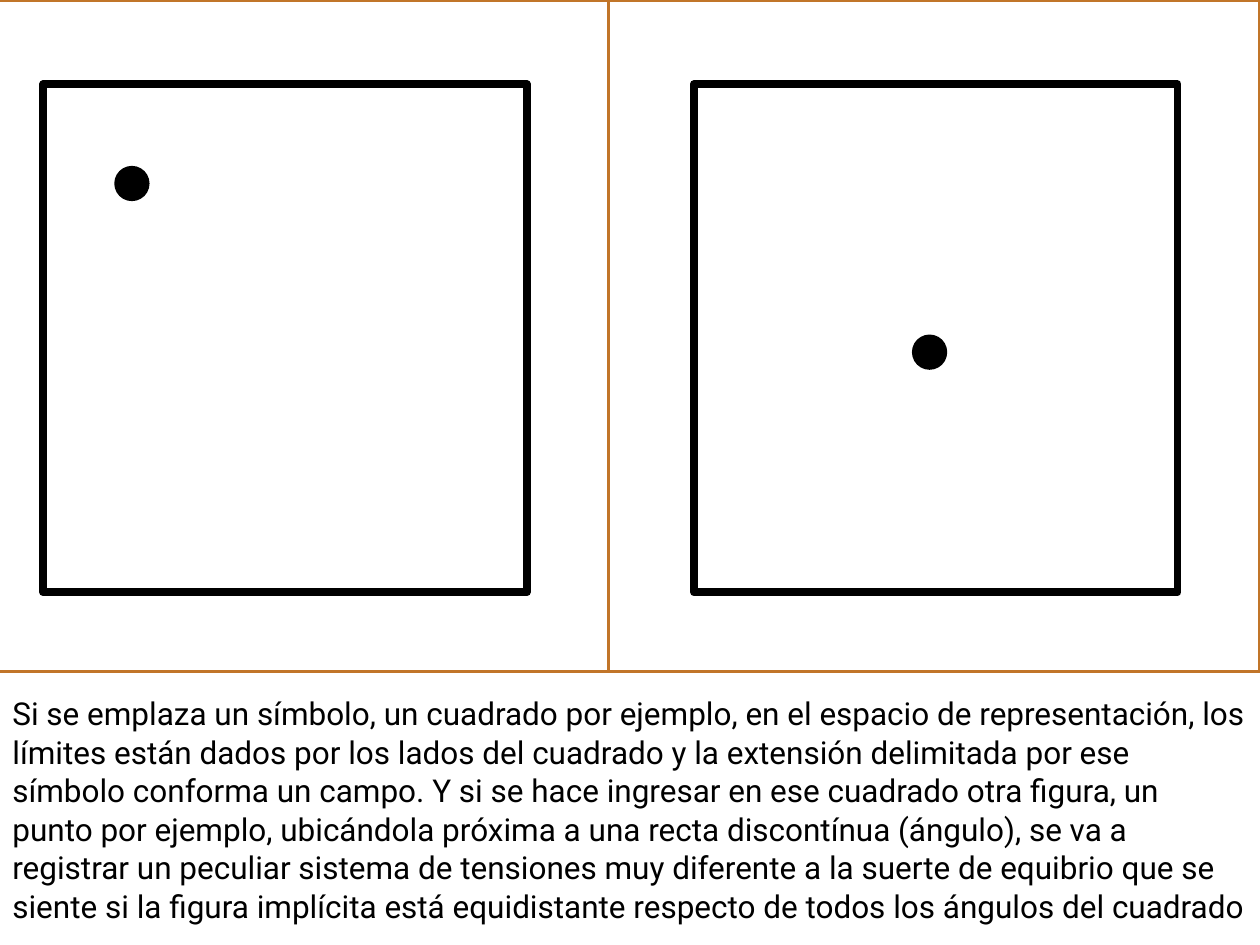
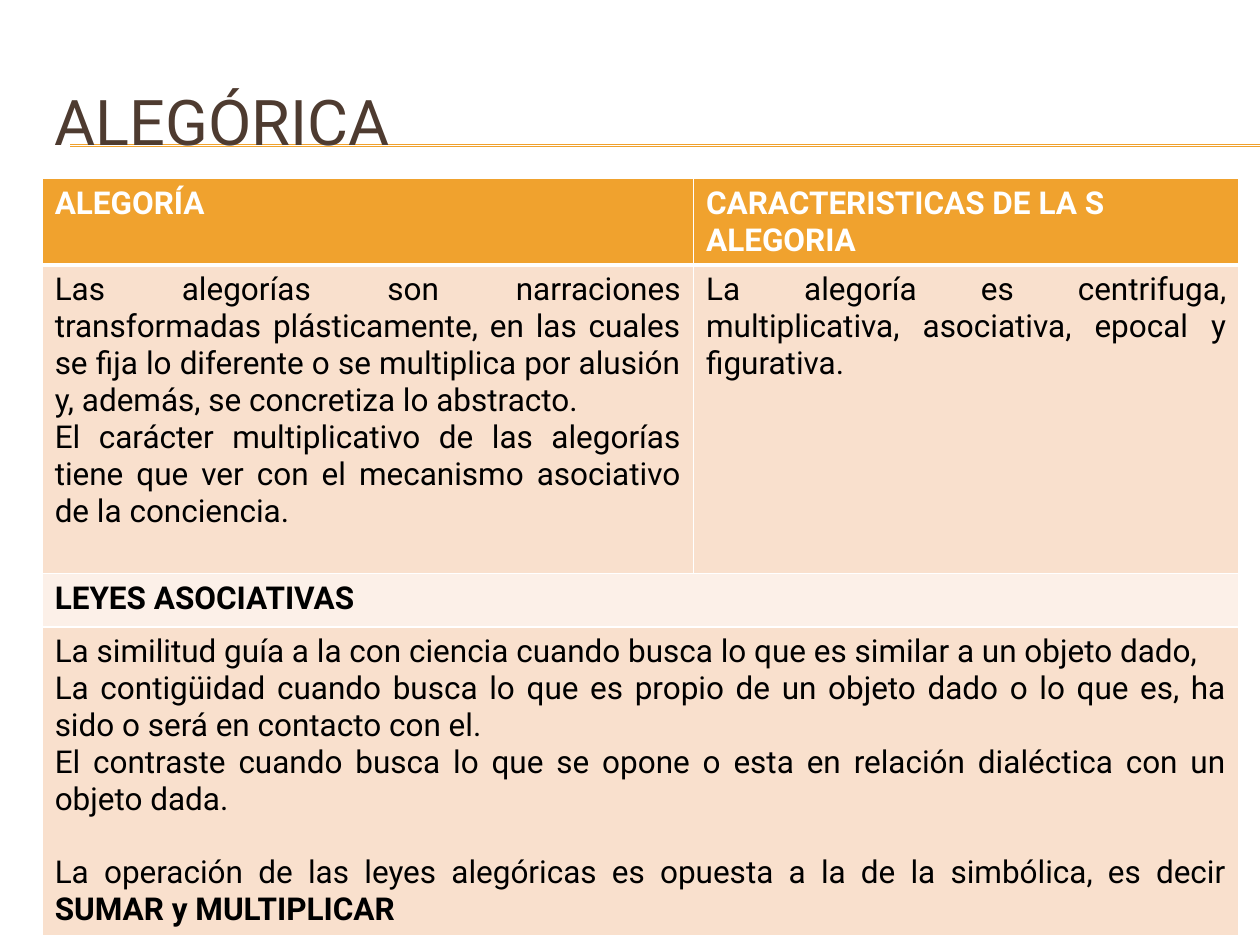
from dataclasses import dataclass

from lxml import etree
from pptx import Presentation
from pptx.dml.color import RGBColor
from pptx.enum.shapes import MSO_CONNECTOR, MSO_SHAPE
from pptx.enum.text import MSO_ANCHOR, MSO_AUTO_SIZE, PP_ALIGN
from pptx.oxml.ns import qn
from pptx.util import Cm, Pt

LINE = MSO_CONNECTOR.STRAIGHT
RECT, OVAL = MSO_SHAPE.RECTANGLE, MSO_SHAPE.OVAL
MIDDLE = MSO_ANCHOR.MIDDLE
FIXED = MSO_AUTO_SIZE.NONE
LEFT, JUSTIFY = PP_ALIGN.LEFT, PP_ALIGN.JUSTIFY


@dataclass(frozen=True)
class Theme:
    font: str = "Roboto"
    title: int = 36
    body: int = 18
    white: str = "FFFFFF"
    black: str = "000000"
    brown: str = "4E3B30"
    gold: str = "F0A22E"
    copper: str = "C17529"
    peach: str = "F9E0CD"
    cream: str = "FCF0E8"


THEME = Theme()
WIDTH, HEIGHT = 25.4, 19.05

CAPTION = (
    "Si se emplaza un símbolo, un cuadrado por ejemplo, en el espacio de representación, "
    "los límites están dados por los lados del cuadrado y la extensión delimitada por ese "
    "símbolo conforma un campo. Y si se hace ingresar en ese cuadrado otra figura, un punto "
    "por ejemplo, ubicándola próxima a una recta discontínua (ángulo), se va a registrar un "
    "peculiar sistema de tensiones muy diferente a la suerte de equibrio que se siente si la "
    "figura implícita está equidistante respecto de todos los ángulos del cuadrado"
)
STORIES = [
    "Las alegorías son narraciones transformadas plásticamente, en las cuales se fija lo "
    "diferente o se multiplica por alusión y, además, se concretiza lo abstracto.",
    "El carácter multiplicativo de las alegorías tiene que ver con el mecanismo asociativo "
    "de la conciencia.",
]
TRAITS = ["La alegoría es centrifuga, multiplicativa, asociativa, epocal y figurativa."]
LAWS = [
    "La similitud guía a la con ciencia cuando busca lo que es similar a un objeto dado,",
    "La contigüidad cuando busca lo que es propio de un objeto dado o lo que es, ha sido o "
    "será en contacto con el.",
    "El contraste cuando busca lo que se opone o esta en relación dialéctica con un objeto dada.",
    "La operación de las leyes alegóricas es opuesta a la de la simbólica, es decir ",
]


def add_run(para, text, color=THEME.black, size=THEME.body, bold=False):
    run = para.add_run()
    run.text = text
    font = run.font
    font.name, font.size, font.bold = THEME.font, Pt(size), bold
    font.color.rgb = RGBColor.from_string(color)


def add_lines(frame, lines, align=LEFT, **style):
    for index, text in enumerate(lines):
        para = frame.add_paragraph() if index else frame.paragraphs[0]
        para.alignment = align
        add_run(para, text, **style)
    return para


def add_form(group, kind, box, fill, line, weight):
    form = group.shapes.add_shape(kind, *map(Cm, box))
    form.shadow.inherit = False
    if fill:
        form.fill.solid()
        form.fill.fore_color.rgb = RGBColor.from_string(fill)
    else:
        form.fill.background()
    form.line.color.rgb = RGBColor.from_string(line)
    form.line.width = Pt(weight)


def add_panel(slide, left, dot):
    group = slide.shapes.add_group_shape()
    add_form(group, RECT, (left, 0, 13.13, 13.54), THEME.white, THEME.copper, 2)
    add_form(group, RECT, (left + 1.72, 1.7, 9.75, 10.24), None, THEME.black, 4.5)
    add_form(group, OVAL, (*dot, 0.64, 0.64), THEME.black, THEME.black, 2)


def add_caption(slide, text):
    box = slide.shapes.add_textbox(Cm(0), Cm(13.87), Cm(WIDTH), Cm(4.88))
    frame = box.text_frame
    frame.word_wrap = True
    frame.vertical_anchor = MIDDLE
    add_lines(frame, [text]).line_spacing = 1.02


def add_title(slide, text):
    title = slide.shapes.title
    title.left, title.top, title.width, title.height = map(Cm, (0.85, 1.27, 24.13, 2.33))
    frame = title.text_frame
    frame.auto_size, frame.vertical_anchor = FIXED, MIDDLE
    add_lines(frame, [text], color=THEME.brown, size=THEME.title)
    for level in (2.92, 2.95):
        rule = slide.shapes.add_connector(LINE, Cm(1.42), Cm(level), Cm(WIDTH), Cm(level))
        rule.line.color.rgb = RGBColor.from_string(THEME.gold)
        rule.line.width = Pt(0.75)
        etree.SubElement(rule.element.spPr, qn("a:effectLst"))
        title.element.addprevious(rule.element)


def paint(cell, fill, top, bottom):
    props = cell._tc.get_or_add_tcPr()
    for side, weight in (("L", 1), ("R", 1), ("T", top), ("B", bottom)):
        edge = etree.SubElement(props, qn(f"a:ln{side}"), w=str(Pt(weight)))
        solid = etree.SubElement(edge, qn("a:solidFill"))
        etree.SubElement(solid, qn("a:srgbClr"), val=THEME.white)
    cell.fill.solid()
    cell.fill.fore_color.rgb = RGBColor.from_string(fill)


def add_grid(slide):
    widths, heights = (13.13, 11.0), (1.73, 6.22, 1.07, 6.22)
    fills = (THEME.gold, THEME.peach, THEME.cream, THEME.peach)
    size = sum(widths), sum(heights)
    grid = slide.shapes.add_table(4, 2, Cm(0.85), Cm(3.6), *map(Cm, size)).table
    for column, width in zip(grid.columns, widths):
        column.width = Cm(width)
    for index, (row, height, fill) in enumerate(zip(grid.rows, heights, fills)):
        row.height = Cm(height)
        for cell in row.cells:
            paint(cell, fill, 3 if index == 1 else 1, 3 if index == 0 else 1)
    for index in (2, 3):
        grid.cell(index, 0).merge(grid.cell(index, 1))
    for index, head in enumerate(("ALEGORÍA", "CARACTERISTICAS DE LA S ALEGORIA")):
        add_lines(grid.cell(0, index).text_frame, [head], color=THEME.white, bold=True)
    add_lines(grid.cell(1, 0).text_frame, STORIES, JUSTIFY)
    add_lines(grid.cell(1, 1).text_frame, TRAITS, JUSTIFY)
    add_lines(grid.cell(2, 0).text_frame, ["LEYES ASOCIATIVAS"], bold=True)
    last = add_lines(grid.cell(3, 0).text_frame, LAWS, JUSTIFY)
    last.space_before = Pt(21)
    add_run(last, "SUMAR y MULTIPLICAR", bold=True)


def main():
    deck = Presentation()
    deck.slide_width, deck.slide_height = Cm(WIDTH), Cm(HEIGHT)
    field = deck.slides.add_slide(deck.slide_layouts.get_by_name("Blank"))
    add_panel(field, -0.85, (2.34, 3.38))
    add_panel(field, 12.27, (18.42, 6.78))
    add_caption(field, CAPTION)
    laws = deck.slides.add_slide(deck.slide_layouts.get_by_name("Title Only"))
    add_title(laws, "ALEGÓRICA")
    add_grid(laws)
    deck.save("out.pptx")


if __name__ == "__main__":
    main()
